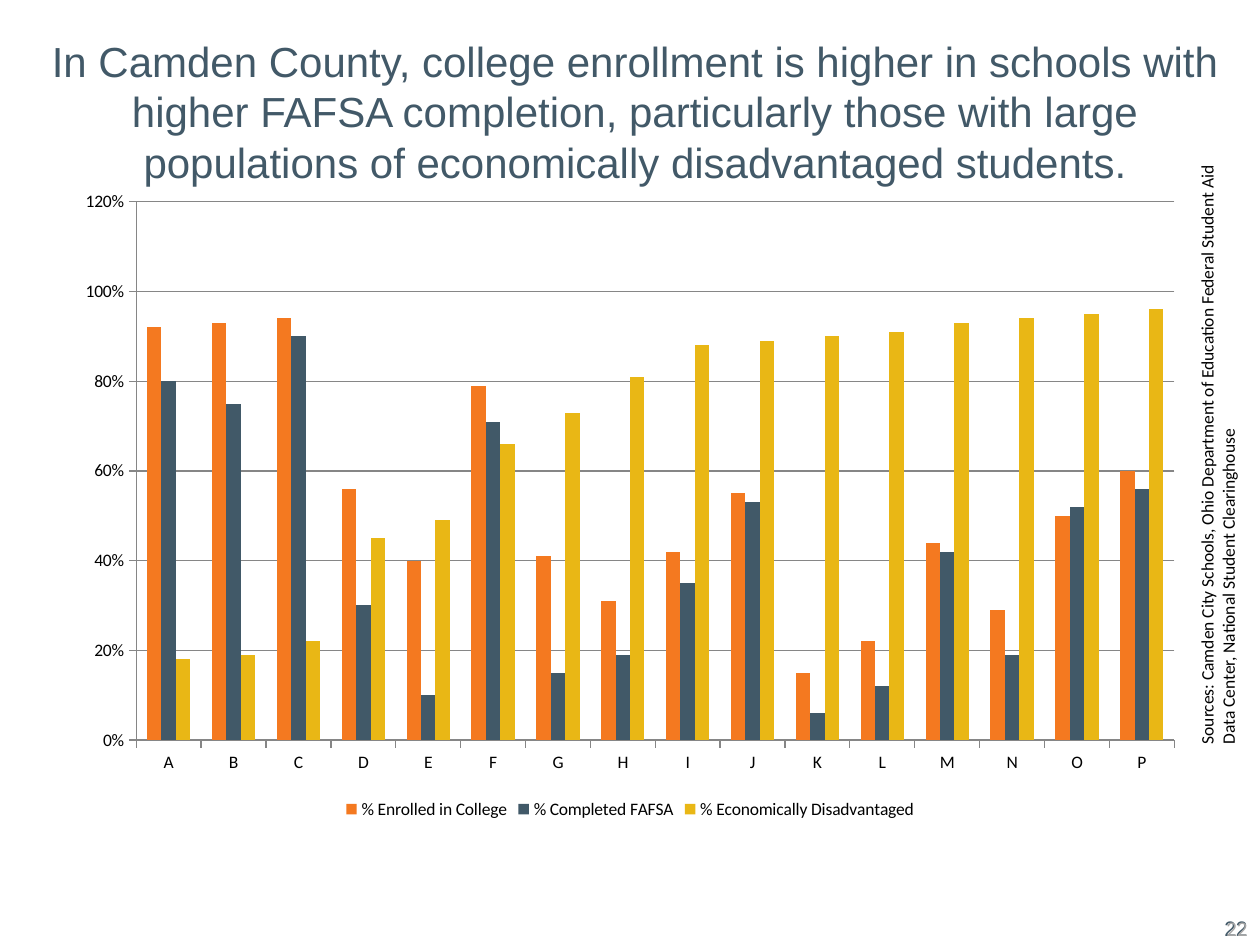
from pptx import Presentation
from pptx.chart.data import CategoryChartData
from pptx.dml.color import RGBColor
from pptx.enum.chart import XL_CHART_TYPE, XL_LEGEND_POSITION, XL_TICK_MARK
from pptx.enum.text import MSO_ANCHOR, MSO_AUTO_SIZE, PP_ALIGN
from pptx.util import Inches, Pt

SLATE = RGBColor(0x42, 0x59, 0x68)
ORANGE = RGBColor(0xF4, 0x79, 0x20)
BLUE_GREY = RGBColor(0x41, 0x59, 0x68)
GOLD = RGBColor(0xE9, 0xB7, 0x15)
AXIS_GREY = RGBColor(0x86, 0x86, 0x86)
LIGHT_GREY = RGBColor(0xA6, 0xA6, 0xA6)
BLACK = RGBColor(0, 0, 0)

SCHOOLS = "ABCDEFGHIJKLMNOP"
MEASURES = [
    ("% Enrolled in College", ORANGE,
     [92, 93, 94, 56, 40, 79, 41, 31, 42, 55, 15, 22, 44, 29, 50, 60]),
    ("% Completed FAFSA", BLUE_GREY,
     [80, 75, 90, 30, 10, 71, 15, 19, 35, 53, 6, 12, 42, 19, 52, 56]),
    ("% Economically Disadvantaged", GOLD,
     [18, 19, 22, 45, 49, 66, 73, 81, 88, 89, 90, 91, 93, 94, 95, 96]),
]


class SlideBuilder:
    """Places elements on a grid of 40 columns by 30 rows."""
    HEADING_FONT = "Arial"
    BODY_FONT = "Calibri"
    COLUMNS, ROWS = 40, 30

    def __init__(self, deck):
        self.column = deck.slide_width / self.COLUMNS
        self.row = deck.slide_height / self.ROWS
        self.slide = deck.slides.add_slide(deck.slide_layouts[5])

    def box(self, left, top, width, height):
        return (round(left * self.column), round(top * self.row),
                round(width * self.column), round(height * self.row))

    def fill_frame(self, frame, text, font, size, color, align):
        frame.word_wrap = True
        paragraph = frame.paragraphs[0]
        paragraph.alignment = align
        run = paragraph.add_run()
        run.text = text
        run.font.name = font
        run.font.size = Pt(size)
        run.font.color.rgb = color

    def title(self, place, text):
        heading = self.slide.shapes.title
        heading.left, heading.top, heading.width, heading.height = self.box(*place)
        frame = heading.text_frame
        frame.auto_size = MSO_AUTO_SIZE.NONE
        frame.vertical_anchor = MSO_ANCHOR.MIDDLE
        self.fill_frame(frame, text, self.HEADING_FONT, 24, SLATE, PP_ALIGN.CENTER)

    def text(self, place, text, font, size, color, align=PP_ALIGN.LEFT, rotation=0):
        label = self.slide.shapes.add_textbox(*self.box(*place))
        label.rotation = rotation
        self.fill_frame(label.text_frame, text, font, size, color, align)

    def column_chart(self, place, categories, measures):
        data = CategoryChartData(number_format="0%")
        data.categories = list(categories)
        for name, _, percents in measures:
            data.add_series(name, [percent / 100 for percent in percents])
        chart = self.slide.shapes.add_chart(
            XL_CHART_TYPE.COLUMN_CLUSTERED, *self.box(*place), data).chart
        chart.font.name = self.BODY_FONT
        chart.font.size = Pt(10)
        chart.font.color.rgb = BLACK
        chart.has_title = False

        # Legend
        chart.has_legend = True
        chart.legend.position = XL_LEGEND_POSITION.BOTTOM
        chart.legend.include_in_layout = False

        # Columns
        plot = chart.plots[0]
        plot.gap_width = 150
        plot.vary_by_categories = False
        for series, (_, color, _) in zip(plot.series, measures):
            series.invert_if_negative = False
            series.format.fill.solid()
            series.format.fill.fore_color.rgb = color

        # Axes and gridlines
        values = chart.value_axis
        values.minimum_scale, values.maximum_scale, values.major_unit = 0, 1.2, 0.2
        values.tick_labels.number_format = "0%"
        values.tick_labels.number_format_is_linked = False
        values.has_major_gridlines = True
        for axis in (values, chart.category_axis):
            axis.major_tick_mark = XL_TICK_MARK.OUTSIDE
        for part in (values, chart.category_axis, values.major_gridlines):
            part.format.line.color.rgb = AXIS_GREY
            part.format.line.width = Pt(0.75)


def main():
    deck = Presentation()
    deck.slide_width, deck.slide_height = Inches(10), Inches(7.5)
    page = SlideBuilder(deck)

    # Page number, set in two layers
    for font, color in ((page.HEADING_FONT, SLATE), (page.BODY_FONT, LIGHT_GREY)):
        page.text((28.6, 28.88, 11.4, 1.12), "22", font, 12, color, PP_ALIGN.RIGHT)

    # Headline
    page.title((1, 0.68, 38.32, 5.68),
               "In Camden County, college enrollment is higher in schools with "
               "higher FAFSA completion, particularly those with large "
               "populations of economically disadvantaged students.")

    # School comparison
    page.column_chart((2, 5.68, 36, 20.48), SCHOOLS, MEASURES)

    # Sources along the right edge
    page.text((29, 13.48, 19.32, 1.76),
              "Sources: Camden City Schools, Ohio Department of Education Federal "
              "Student Aid Data Center, National Student Clearinghouse",
              page.BODY_FONT, 10, BLACK, rotation=270)

    deck.save("out.pptx")


if __name__ == "__main__":
    main()
